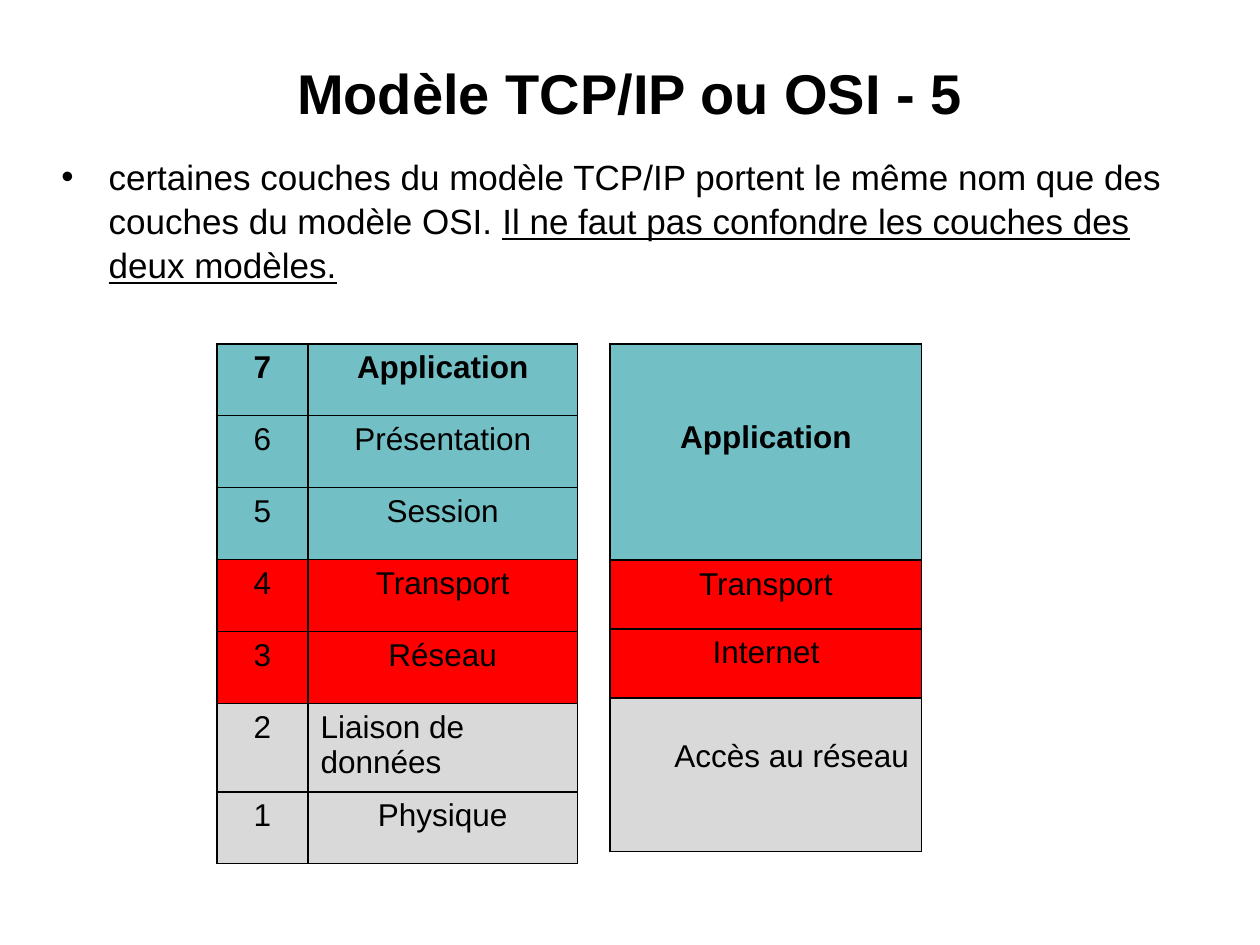
from dataclasses import dataclass

import pptx
import pptx.dml.color
import pptx.enum.text
import pptx.oxml
import pptx.oxml.ns
import pptx.util
from lxml import etree

Cm = pptx.util.Cm
Pt = pptx.util.Pt
ALIGN = pptx.enum.text.PP_ALIGN
ANCHOR = pptx.enum.text.MSO_ANCHOR
qn = pptx.oxml.ns.qn

COLORS = {
    "text": "000000",
    "application": "72BFC5",
    "transport": "FF0000",
    "network": "D9D9D9",
}
FONT = "Arial"


@dataclass
class Layer:
    labels: tuple[str, ...]
    color: str
    height: float
    bold: bool = False
    align: ALIGN = ALIGN.CENTER
    top_margin: float = 0.13


@dataclass
class Stack:
    left: float
    top: float
    widths: tuple[float, ...]
    layers: list[Layer]


ROW = 1.45
OSI = Stack(4.37, 6.93, (1.84, 5.43), [
    Layer(("7", "Application"), "application", ROW, bold=True),
    Layer(("6", "Présentation"), "application", ROW),
    Layer(("5", "Session"), "application", ROW),
    Layer(("4", "Transport"), "transport", ROW),
    Layer(("3", "Réseau"), "transport", ROW),
    Layer(("2", "Liaison de données"), "network", 1.68, align=ALIGN.LEFT),
    Layer(("1", "Physique"), "network", ROW),
])
TCP_IP = Stack(12.3, 6.93, (6.28,), [
    Layer(("Application",), "application", 4.36, bold=True, top_margin=1.54),
    Layer(("Transport",), "transport", 1.39),
    Layer(("Internet",), "transport", 1.39),
    Layer(("Accès au réseau",), "network", 3.1, align=ALIGN.RIGHT, top_margin=0.83),
])


def rgb(name: str) -> pptx.dml.color.RGBColor:
    return pptx.dml.color.RGBColor.from_string(COLORS[name])


def style_font(font, size: float, bold: bool = False) -> None:
    font.name = FONT
    font.size = Pt(size)
    font.bold = bold
    font.color.rgb = rgb("text")


def add_borders(cell) -> None:
    properties = cell._tc.get_or_add_tcPr()
    for position, side in enumerate(("lnL", "lnR", "lnT", "lnB")):
        border = etree.Element(qn(f"a:{side}"), w=str(Pt(1)))
        fill = etree.SubElement(border, qn("a:solidFill"))
        etree.SubElement(fill, qn("a:srgbClr"), val=COLORS["text"])
        properties.insert(position, border)


def draw_stack(slide, stack: Stack) -> None:
    table = slide.shapes.add_table(
        len(stack.layers), len(stack.widths), Cm(stack.left), Cm(stack.top),
        Cm(sum(stack.widths)), Cm(sum(layer.height for layer in stack.layers)),
    ).table
    table.first_row = False
    table.horz_banding = False
    for column, width in zip(table.columns, stack.widths):
        column.width = Cm(width)
    for row, layer in zip(table.rows, stack.layers):
        row.height = Cm(layer.height)
        for cell, label in zip(row.cells, layer.labels):
            cell.fill.solid()
            cell.fill.fore_color.rgb = rgb(layer.color)
            cell.margin_top = Cm(layer.top_margin)
            add_borders(cell)
            paragraph = cell.text_frame.paragraphs[0]
            paragraph.text = label
            paragraph.alignment = ALIGN.CENTER if label.isdigit() else layer.align
            style_font(paragraph.runs[0].font, 18, layer.bold)


def add_text_frame(slide, left: float, top: float, width: float, height: float):
    frame = slide.shapes.add_textbox(Cm(left), Cm(top), Cm(width), Cm(height)).text_frame
    frame.word_wrap = True
    return frame


def draw_title(slide) -> None:
    frame = add_text_frame(slide, 1.27, 0.76, 22.86, 2.21)
    frame.vertical_anchor = ANCHOR.MIDDLE
    frame.text = "Modèle TCP/IP ou OSI - 5"
    title = frame.paragraphs[0]
    title.alignment = ALIGN.CENTER
    style_font(title.runs[0].font, 32, True)


def draw_warning(slide) -> None:
    frame = add_text_frame(slide, 0.99, 2.97, 22.86, 3.76)
    warning = frame.paragraphs[0]
    warning.line_spacing = 1.05
    properties = warning._p.get_or_add_pPr()
    properties.set("marL", str(Cm(0.95)))
    properties.set("indent", str(-Cm(0.95)))
    etree.SubElement(properties, qn("a:buFont"), typeface=FONT)
    etree.SubElement(properties, qn("a:buChar"), char="•")
    for sentence, underlined in (
        ("certaines couches du modèle TCP/IP portent le même nom que des "
         "couches du modèle OSI. ", False),
        ("Il ne faut pas confondre les couches des deux modèles.", True),
    ):
        run = warning.add_run()
        run.text = sentence
        style_font(run.font, 20)
        run.font.underline = underlined


def main() -> None:
    presentation = pptx.Presentation()
    presentation.slide_width = Cm(25.4)
    presentation.slide_height = Cm(19.05)
    slide = presentation.slides.add_slide(presentation.slide_layouts[6])
    draw_title(slide)
    draw_warning(slide)
    for stack in (TCP_IP, OSI):
        draw_stack(slide, stack)
    presentation.save("out.pptx")


if __name__ == "__main__":
    main()
